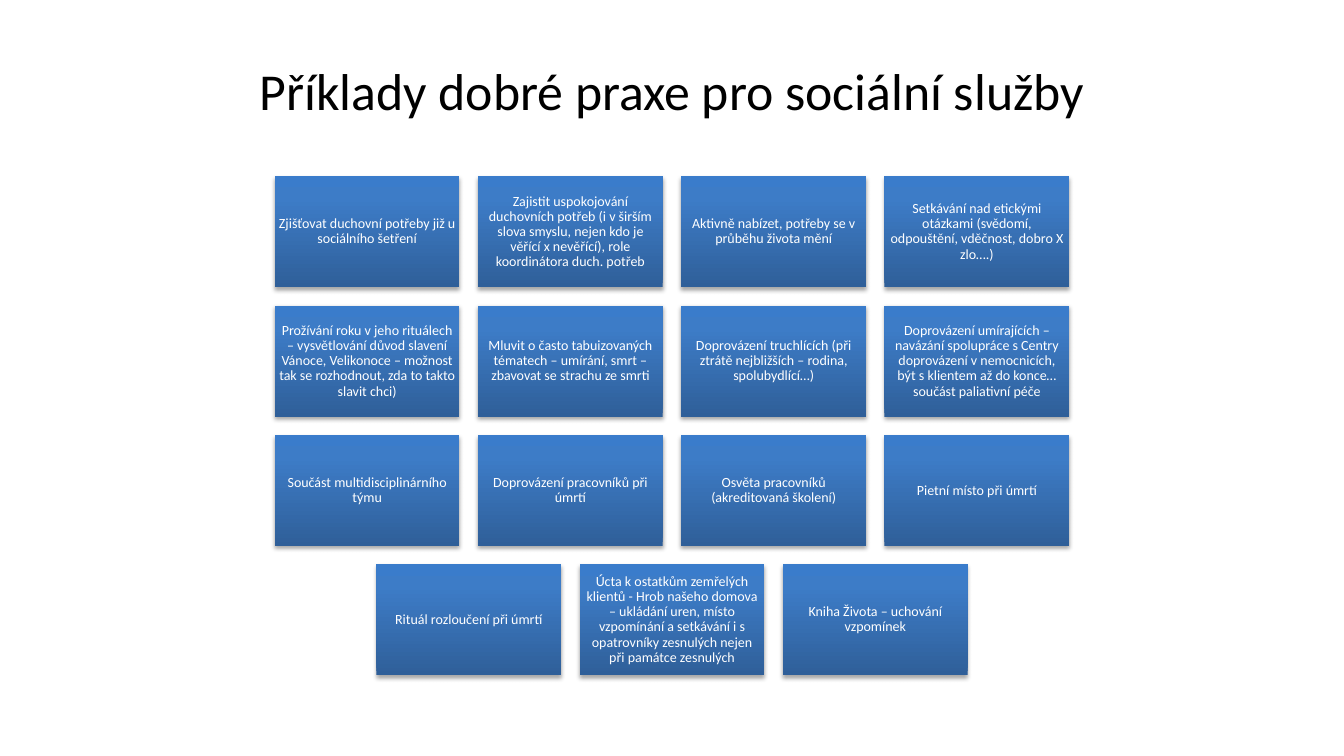
from dataclasses import dataclass

import lxml.etree
import pptx
import pptx.dml.color
import pptx.enum.shapes
import pptx.enum.text
import pptx.oxml.ns
import pptx.util

Pt = pptx.util.Pt
qn = pptx.oxml.ns.qn


@dataclass(frozen=True)
class Theme:
    font: str = "Calibri"
    title_size: float = 37
    card_size: float = 10
    title_color: str = "000000"
    card_color: str = "FFFFFF"
    shadow_color: str = "000000"
    # Position in percent and colour, from the bottom of a card to its top
    card_gradient: tuple = ((0, "2F5F99"), (80, "3D7CC7"), (100, "3A7CCB"))


theme = Theme()

SLIDE_WIDTH, SLIDE_HEIGHT = 960, 540
CARD_WIDTH, CARD_HEIGHT, GAP = 132, 79.2, 13.2
GRID_TOP = 126

card_rows = [
    [
        "Zjišťovat duchovní potřeby již u sociálního šetření",
        "Zajistit uspokojování duchovních potřeb (i v širším slova smyslu, "
        "nejen kdo je věřící x nevěřící), role koordinátora duch. potřeb",
        "Aktivně nabízet, potřeby se v průběhu života mění",
        "Setkávání nad etickými otázkami (svědomí, odpouštění, vděčnost, "
        "dobro X zlo….)",
    ],
    [
        "Prožívání roku v jeho rituálech – vysvětlování důvod slavení Vánoce, "
        "Velikonoce – možnost tak se rozhodnout, zda to takto slavit chci)",
        "Mluvit o často tabuizovaných tématech – umírání, smrt – zbavovat se "
        "strachu ze smrti",
        "Doprovázení truchlících (při ztrátě nejbližších – rodina, "
        "spolubydlící…)",
        "Doprovázení umírajících – navázání spolupráce s Centry doprovázení "
        "v nemocnicích, být s klientem až do konce…součást paliativní péče",
    ],
    [
        "Součást multidisciplinárního týmu",
        "Doprovázení pracovníků při úmrtí",
        "Osvěta pracovníků (akreditovaná školení)",
        "Pietní místo při úmrtí",
    ],
    [
        "Rituál rozloučení při úmrtí",
        "Úcta k ostatkům zemřelých klientů - Hrob našeho domova – ukládání "
        "uren, místo vzpomínání a setkávání i s opatrovníky zesnulých nejen "
        "při památce zesnulých",
        "Kniha Života – uchování vzpomínek",
    ],
]


def write_centred(shape, text, size, color):
    frame = shape.text_frame
    frame.word_wrap = True
    frame.vertical_anchor = pptx.enum.text.MSO_ANCHOR.MIDDLE
    paragraph = frame.paragraphs[0]
    paragraph.alignment = pptx.enum.text.PP_ALIGN.CENTER
    paragraph.line_spacing = 0.9
    run = paragraph.add_run()
    run.text = text
    run.font.name = theme.font
    run.font.size = Pt(size)
    run.font.color.rgb = pptx.dml.color.RGBColor.from_string(color)


def style_card(shape):
    """Give the card its upward gradient, no outline and a soft shadow below."""
    shape.line.fill.background()
    shape.fill.gradient()
    shape.fill.gradient_angle = 90
    properties = shape._element.spPr
    stops = properties.find(".//" + qn("a:gsLst"))
    for stop in list(stops):
        stops.remove(stop)
    for position, color in theme.card_gradient:
        stop = lxml.etree.SubElement(stops, qn("a:gs"), pos=str(position * 1000))
        lxml.etree.SubElement(stop, qn("a:srgbClr"), val=color)

    shape.shadow.inherit = False
    shadow = lxml.etree.SubElement(
        properties.find(qn("a:effectLst")), qn("a:outerShdw"),
        blurRad=str(Pt(3.1)), dist=str(Pt(1.8)), dir="5400000", rotWithShape="0",
    )
    shadow_color = lxml.etree.SubElement(
        shadow, qn("a:srgbClr"), val=theme.shadow_color)
    lxml.etree.SubElement(shadow_color, qn("a:alpha"), val="35000")


presentation = pptx.Presentation()
presentation.slide_width = Pt(SLIDE_WIDTH)
presentation.slide_height = Pt(SLIDE_HEIGHT)
slide = presentation.slides.add_slide(presentation.slide_layouts[6])

title = slide.shapes.add_textbox(Pt(156), Pt(21.6), Pt(648), Pt(90))
write_centred(title, "Příklady dobré praxe pro sociální služby",
              theme.title_size, theme.title_color)

for row, texts in enumerate(card_rows):
    row_width = len(texts) * (CARD_WIDTH + GAP) - GAP
    row_left = (SLIDE_WIDTH - row_width) / 2
    top = GRID_TOP + row * (CARD_HEIGHT + GAP)
    for column, text in enumerate(texts):
        card = slide.shapes.add_shape(
            pptx.enum.shapes.MSO_SHAPE.RECTANGLE,
            Pt(row_left + column * (CARD_WIDTH + GAP)), Pt(top),
            Pt(CARD_WIDTH), Pt(CARD_HEIGHT),
        )
        style_card(card)
        frame = card.text_frame
        frame.margin_left = frame.margin_right = Pt(3)
        frame.margin_top = frame.margin_bottom = Pt(3)
        write_centred(card, text, theme.card_size, theme.card_color)

presentation.save("out.pptx")
